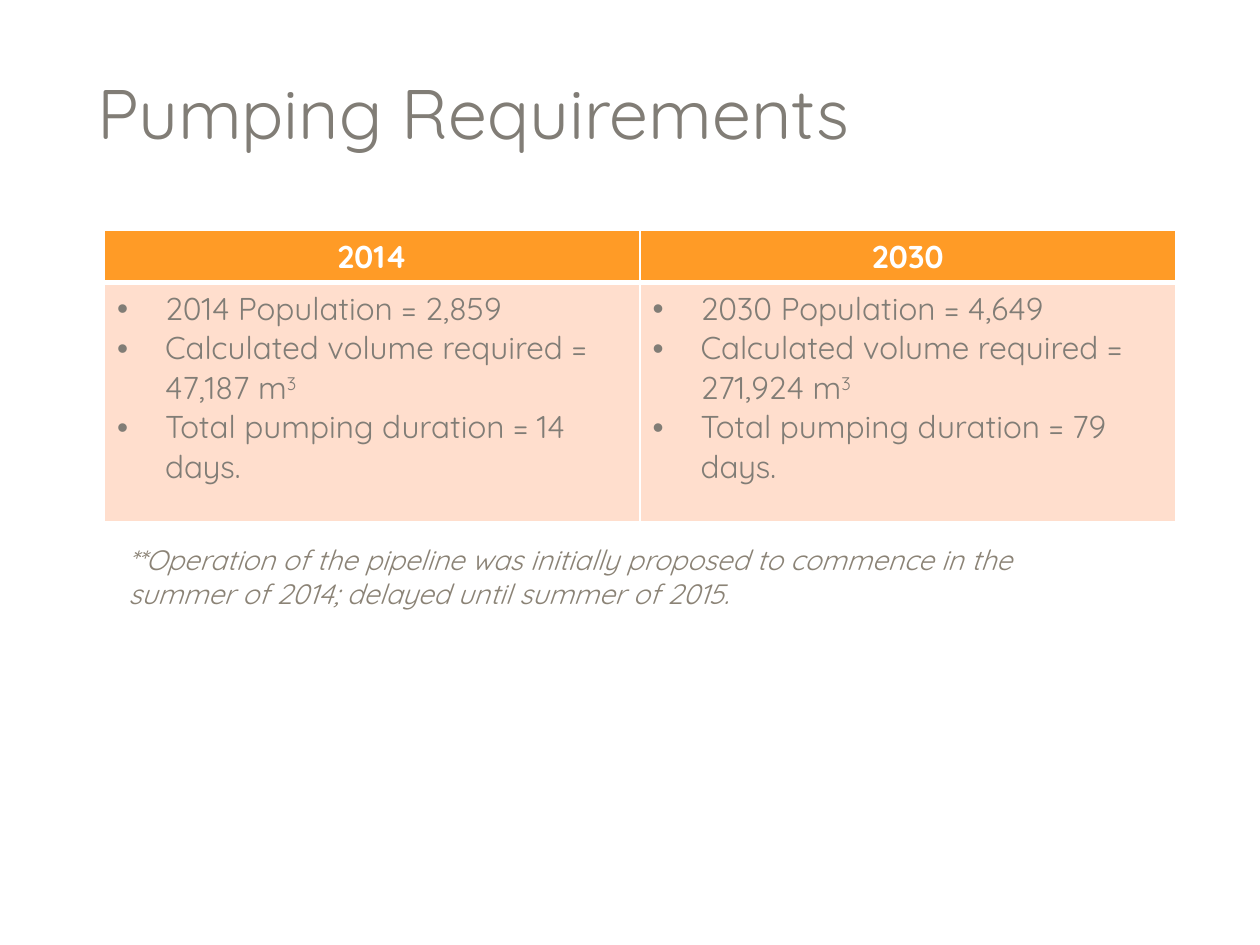
from dataclasses import dataclass

from pptx import Presentation
from pptx.dml.color import RGBColor
from pptx.enum.text import MSO_ANCHOR, MSO_AUTO_SIZE, PP_ALIGN
from pptx.oxml.ns import qn
from pptx.util import Inches, Pt
from lxml.etree import SubElement


@dataclass(frozen=True)
class Theme:
    font: str = "Quicksand"
    text: str = "817D76"
    note: str = "8B8376"
    white: str = "FFFFFF"
    header: str = "FF9B26"
    body: str = "FFDECD"
    title_size: int = 40
    table_size: int = 18
    note_size: int = 16


THEME = Theme()
COLUMNS = [
    ("2014", "2,859", "47,187", "14"),
    ("2030", "4,649", "271,924", "79"),
]


def add_text(paragraph, text, size=THEME.table_size, color=THEME.text,
             bold=False, italic=False, superscript=False, align=PP_ALIGN.LEFT):
    paragraph.alignment = align
    run = paragraph.add_run()
    run.text = text
    font = run.font
    font.name, font.size = THEME.font, Pt(size)
    font.bold, font.italic = bold, italic
    font.color.rgb = RGBColor.from_string(color)
    if superscript:
        run._r.get_or_add_rPr().set("baseline", "30000")


def add_bullet(paragraph):
    properties = paragraph._p.get_or_add_pPr()
    indent = Inches(0.38)
    properties.set("marL", str(indent))
    properties.set("indent", str(-indent))
    SubElement(properties, qn("a:buFont"), typeface="Arial")
    SubElement(properties, qn("a:buChar"), char="•")


def style_cell(cell, fill, top=1, bottom=1):
    properties = cell._tc.get_or_add_tcPr()
    for side, width in (("L", 1), ("R", 1), ("T", top), ("B", bottom)):
        line = SubElement(properties, qn(f"a:ln{side}"), w=str(Pt(width)))
        solid = SubElement(line, qn("a:solidFill"))
        SubElement(solid, qn("a:srgbClr"), val=THEME.white)
    cell.fill.solid()
    cell.fill.fore_color.rgb = RGBColor.from_string(fill)


def add_title(slide, text):
    title = slide.shapes.title
    title.left, title.top = Inches(0.67), Inches(0.5)
    title.width, title.height = Inches(8.67), Inches(0.77)
    title.text_frame.vertical_anchor = MSO_ANCHOR.MIDDLE
    add_text(title.text_frame.paragraphs[0], text, size=THEME.title_size)


def fill_body(cell, year, population, volume, days):
    items = [
        f"{year} Population = {population}",
        f"Calculated volume required = {volume} m",
        f"Total pumping duration = {days} days.",
    ]
    frame = cell.text_frame
    for index, item in enumerate(items):
        paragraph = frame.add_paragraph() if index else frame.paragraphs[0]
        add_bullet(paragraph)
        add_text(paragraph, item)
        if item.endswith(" m"):
            add_text(paragraph, "3", superscript=True)


def add_pumping_table(slide):
    table = slide.shapes.add_table(
        2, len(COLUMNS), Inches(0.83), Inches(1.83), Inches(8.5), Inches(2.31)
    ).table
    table.rows[0].height, table.rows[1].height = Inches(0.41), Inches(1.9)
    for index, column in enumerate(COLUMNS):
        header, body = table.cell(0, index), table.cell(1, index)
        style_cell(header, THEME.header, bottom=3)
        style_cell(body, THEME.body, top=3)
        add_text(header.text_frame.paragraphs[0], column[0],
                 color=THEME.white, bold=True, align=PP_ALIGN.CENTER)
        fill_body(body, *column)


def add_note(slide, text):
    box = slide.shapes.add_textbox(
        Inches(0.92), Inches(4.26), Inches(8.08), Inches(0.64))
    frame = box.text_frame
    frame.word_wrap = True
    frame.auto_size = MSO_AUTO_SIZE.SHAPE_TO_FIT_TEXT
    add_text(frame.paragraphs[0], text, size=THEME.note_size,
             color=THEME.note, italic=True)


def main():
    presentation = Presentation()
    presentation.slide_width, presentation.slide_height = Inches(10), Inches(7.5)
    slide = presentation.slides.add_slide(presentation.slide_layouts[5])
    add_title(slide, "Pumping Requirements")
    add_pumping_table(slide)
    add_note(slide, "**Operation of the pipeline was initially proposed to commence "
                    "in the summer of 2014; delayed until summer of 2015.")
    presentation.save("out.pptx")


if __name__ == "__main__":
    main()
